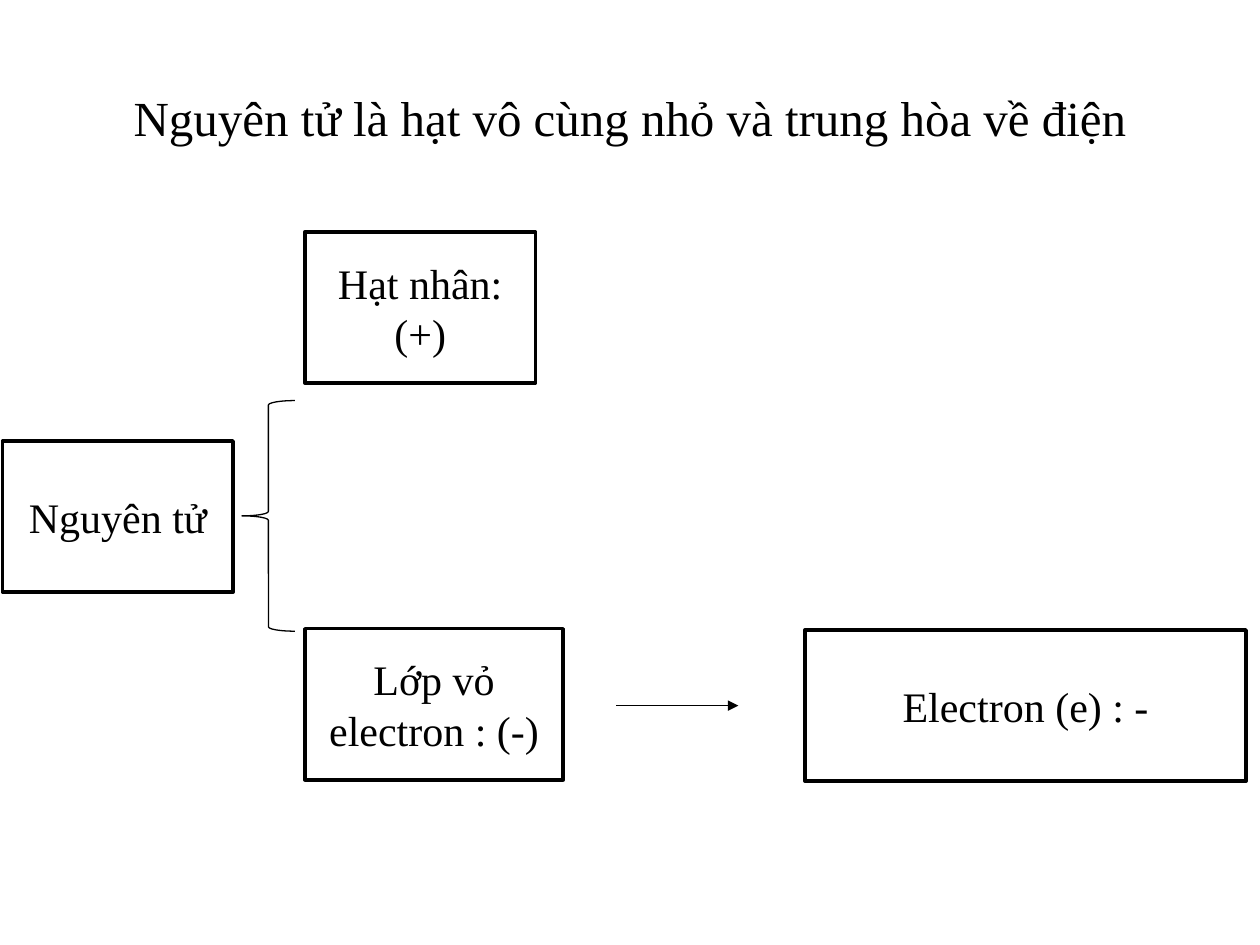
"""Build a slide on the parts of the atom and their charges."""
from dataclasses import dataclass

from lxml.etree import SubElement
from pptx import Presentation
from pptx.dml.color import RGBColor
from pptx.enum.shapes import MSO_CONNECTOR as Link, MSO_SHAPE as Shape
from pptx.enum.text import MSO_ANCHOR as Anchor, PP_ALIGN as Align
from pptx.oxml.ns import qn
from pptx.util import Inches, Pt

COLS, ROWS = 100, 75
WIDTH, HEIGHT = Inches(10), Inches(7.5)
COLORS = {"ink": "000000", "paper": "FFFFFF"}
BOX_HEIGHT = 12
FONT = {"name": "Times New Roman"}


@dataclass
class Box:
    text: str
    col: float
    row: float
    cols: float = 18.3
    rows: float = BOX_HEIGHT


TITLE = Box("Nguyên tử là hạt vô cùng nhỏ và trung hòa về điện", 5, 3, 90, 12.5)
BOXES = [
    Box("Nguyên tử", 0.2, 35),
    Box("Hạt nhân: (+)", 24.2, 18.4),
    Box("Lớp vỏ electron : (-)", 24.2, 49.9, cols=20.5),
    Box("Electron (e) : -", 63.9, 50, cols=35),
]
BRACE = Box("", 19.2, 31.8, 4.2, 18.3)


def x(col: float) -> int:
    return round(WIDTH * col / COLS)


def y(row: float) -> int:
    return round(HEIGHT * row / ROWS)


def place(box: Box) -> tuple[int, int, int, int]:
    return x(box.col), y(box.row), x(box.cols), y(box.rows)


def color(name: str) -> RGBColor:
    return RGBColor.from_string(COLORS[name])


def write(sp, text: str, size: int) -> None:
    tf = sp.text_frame
    for name, value in {"word_wrap": True, "vertical_anchor": Anchor.MIDDLE}.items():
        setattr(tf, name, value)
    p = tf.paragraphs[0]
    p.alignment = Align.CENTER
    r = p.add_run()
    r.text = text
    for name, value in {**FONT, "size": Pt(size)}.items():
        setattr(r.font, name, value)
    r.font.color.rgb = color("ink")


def outline(sp, width: float) -> None:
    sp.line.color.rgb = color("ink")
    sp.line.width = Pt(width)


def draw_title(s, box: Box) -> None:
    write(s.shapes.add_textbox(*place(box)), box.text, 28)


def draw_box(s, box: Box) -> None:
    sp = s.shapes.add_shape(Shape.RECTANGLE, *place(box))
    sp.shadow.inherit = False
    sp.fill.solid()
    sp.fill.fore_color.rgb = color("paper")
    outline(sp, 2)
    write(sp, box.text, 24)


def draw_brace(s, box: Box) -> None:
    sp = s.shapes.add_shape(Shape.LEFT_BRACE, *place(box))
    sp.shadow.inherit = False
    sp.fill.background()
    outline(sp, 0.75)


def draw_arrow(s, start: float, end: float, row: float) -> None:
    sp = s.shapes.add_connector(Link.STRAIGHT, x(start), y(row), x(end), y(row))
    outline(sp, 0.75)
    SubElement(sp.line._get_or_add_ln(), qn("a:tailEnd"), type="triangle")
    SubElement(sp._element.spPr, qn("a:effectLst"))


def main() -> None:
    prs = Presentation()
    prs.slide_width, prs.slide_height = WIDTH, HEIGHT
    s = prs.slides.add_slide(prs.slide_layouts[6])
    draw_title(s, TITLE)
    for box in BOXES:
        draw_box(s, box)
    draw_brace(s, BRACE)
    draw_arrow(s, 48.9, 58.6, BOXES[-1].row + BOX_HEIGHT / 2)
    prs.save("out.pptx")


if __name__ == "__main__":
    main()
